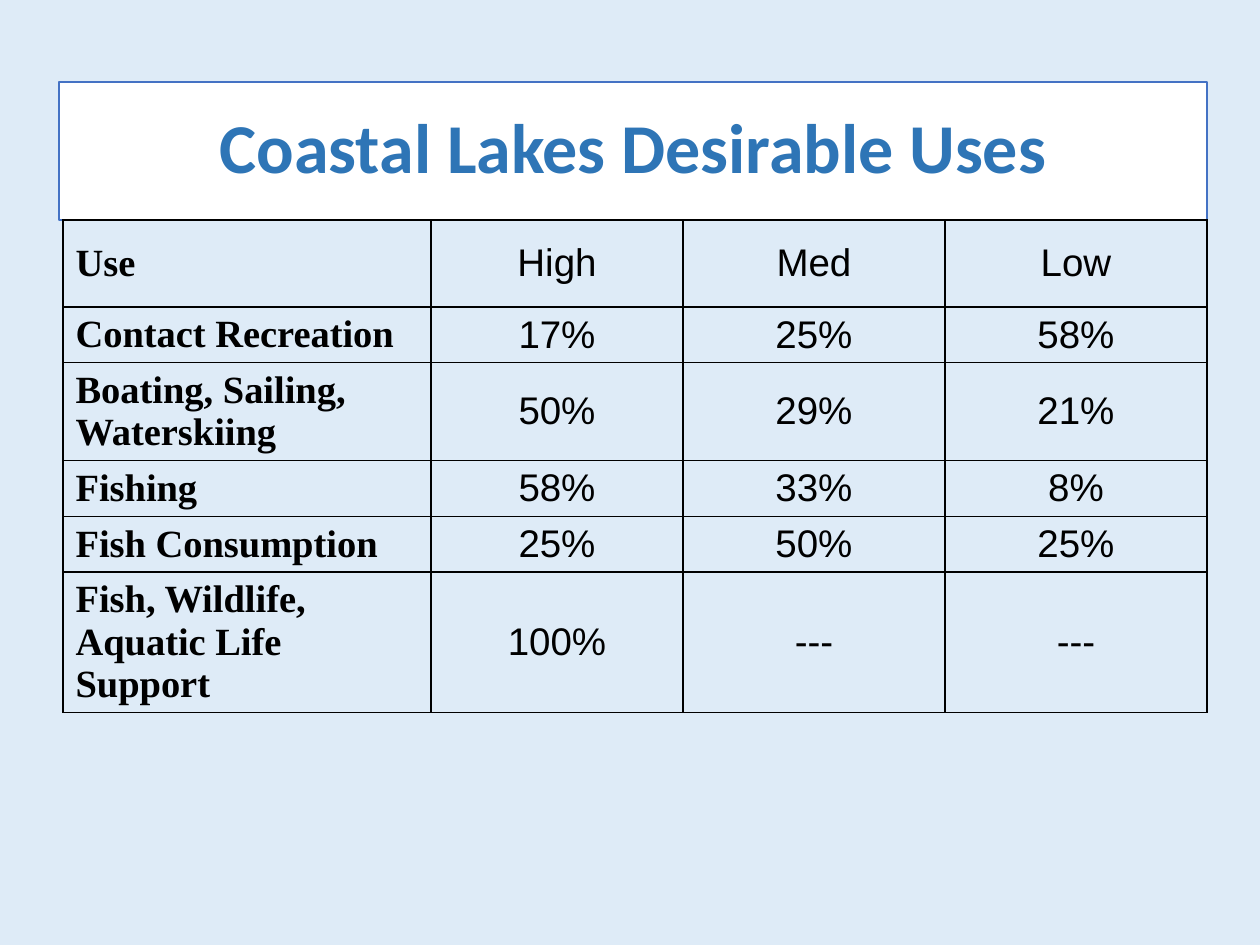
from dataclasses import dataclass

from lxml.etree import SubElement
from pptx import Presentation
from pptx.dml.color import RGBColor
from pptx.enum.text import MSO_ANCHOR, PP_ALIGN
from pptx.oxml.ns import qn
from pptx.util import Emu, Pt


@dataclass
class Row:
    """One use of the lakes, with its shares and row height."""
    use: str
    shares: tuple[str, str, str]
    height: int


ROWS = [
    Row("Use", ("High", "Med", "Low"), 87),
    Row("Contact Recreation", ("17%", "25%", "58%"), 50),
    Row("Boating, Sailing,\nWaterskiing", ("50%", "29%", "21%"), 87),
    Row("Fishing", ("58%", "33%", "8%"), 48),
    Row("Fish Consumption", ("25%", "50%", "25%"), 48),
    Row("Fish, Wildlife,\nAquatic Life\nSupport", ("100%", "---", "---"), 125),
]
WIDTHS = [368, 252, 262, 262]


def px(num: int) -> Emu:
    """Turn pixels into EMU."""
    return Emu(round(num * 914400 / 126))


def tint(code: str) -> RGBColor:
    """Turn a hex string into a colour."""
    return RGBColor.from_string(code)


def write(frame, text: str, *, font: str, size: int, color: str = "000000",
          bold: bool = False, align=PP_ALIGN.CENTER, hang: int = 0,
          space: float = 1.0) -> None:
    """Fill a text frame with one formatted paragraph per line."""
    frame.text = text
    for para in frame.paragraphs:
        para.alignment = align
        para.line_spacing = space
        props = para._p.get_or_add_pPr()
        props.set("marL", str(px(hang)))
        props.set("indent", str(-px(hang)))
        for run in para.runs:
            run.font.name = font
            run.font.size = Pt(size)
            run.font.bold = bold
            run.font.color.rgb = tint(color)


def edge(cell, color: str = "000000", width: int = 1) -> None:
    """Draw all four borders of a clear cell."""
    props = cell._tc.get_or_add_tcPr()
    for side in ("lnL", "lnR", "lnT", "lnB"):
        line = SubElement(props, qn(f"a:{side}"), w=str(Pt(width)))
        fill = SubElement(line, qn("a:solidFill"))
        SubElement(fill, qn("a:srgbClr"), val=color)
    cell.fill.background()


def head(slide, text: str) -> None:
    """Place the framed title."""
    box = slide.shapes.title
    box.left, box.top, box.width, box.height = map(px, (59, 82, 1148, 138))
    box.fill.solid()
    box.fill.fore_color.rgb = tint("FFFFFF")
    box.line.color.rgb = tint("4472C4")
    box.line.width = Pt(1)
    box.text_frame.vertical_anchor = MSO_ANCHOR.MIDDLE
    write(box.text_frame, text, font="Calibri", size=40, color="2E75B6",
          bold=True, space=0.9)


def grid(slide, rows: list[Row]) -> None:
    """Place the table of uses."""
    high = sum(row.height for row in rows)
    table = slide.shapes.add_table(
        len(rows), len(WIDTHS), px(63), px(220), px(sum(WIDTHS)), px(high)).table
    table.first_row = table.horz_banding = False
    for col, width in zip(table.columns, WIDTHS):
        col.width = px(width)
    for line, row in zip(table.rows, rows):
        line.height = px(row.height)
        for num, (cell, text) in enumerate(zip(line.cells, (row.use, *row.shares))):
            cell.vertical_anchor = MSO_ANCHOR.MIDDLE
            edge(cell)
            label = num == 0
            write(cell.text_frame, text, size=22, bold=label, hang=48,
                  font="Times New Roman" if label else "Arial",
                  align=PP_ALIGN.LEFT if label else PP_ALIGN.CENTER)


def main() -> None:
    """Build and save the slide."""
    deck = Presentation()
    deck.slide_width, deck.slide_height = px(1260), px(945)
    slide = deck.slides.add_slide(deck.slide_layouts[5])
    slide.background.fill.solid()
    slide.background.fill.fore_color.rgb = tint("DEEBF7")
    head(slide, "Coastal Lakes Desirable Uses")
    grid(slide, ROWS)
    deck.save("out.pptx")


if __name__ == "__main__":
    main()
